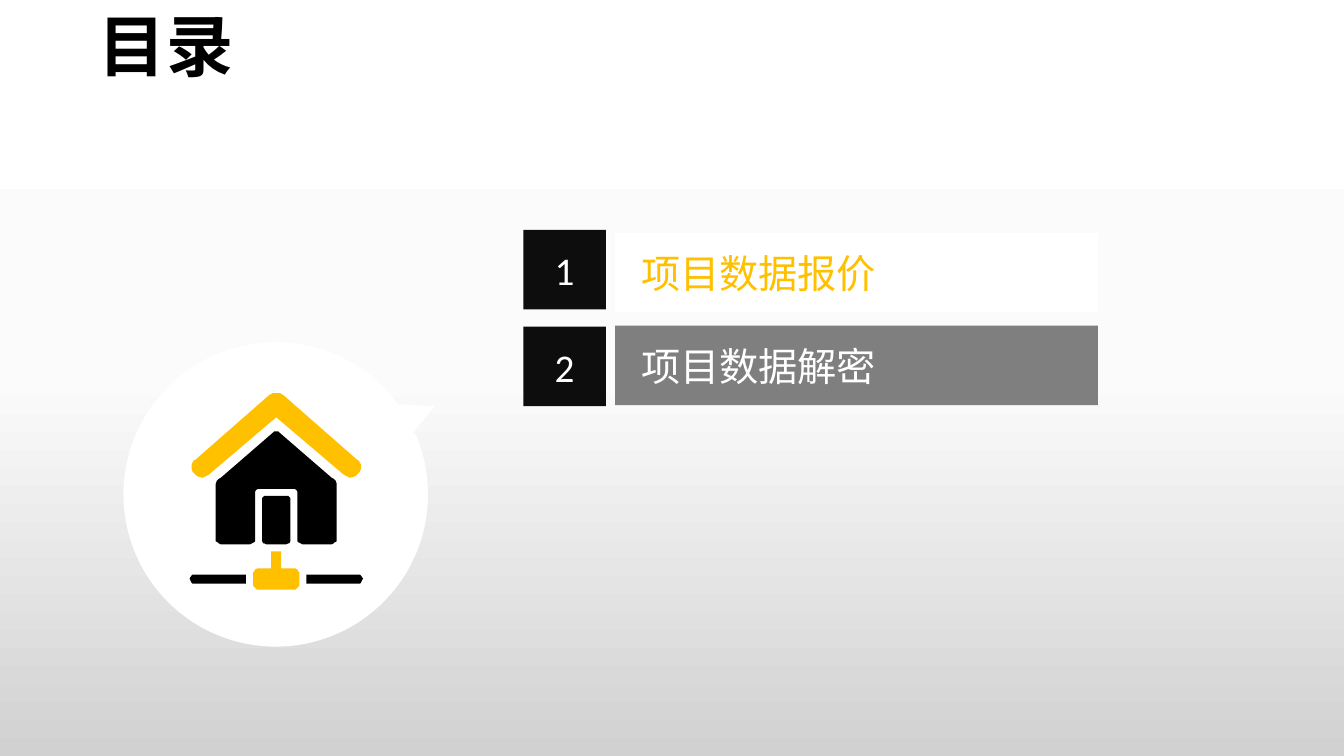
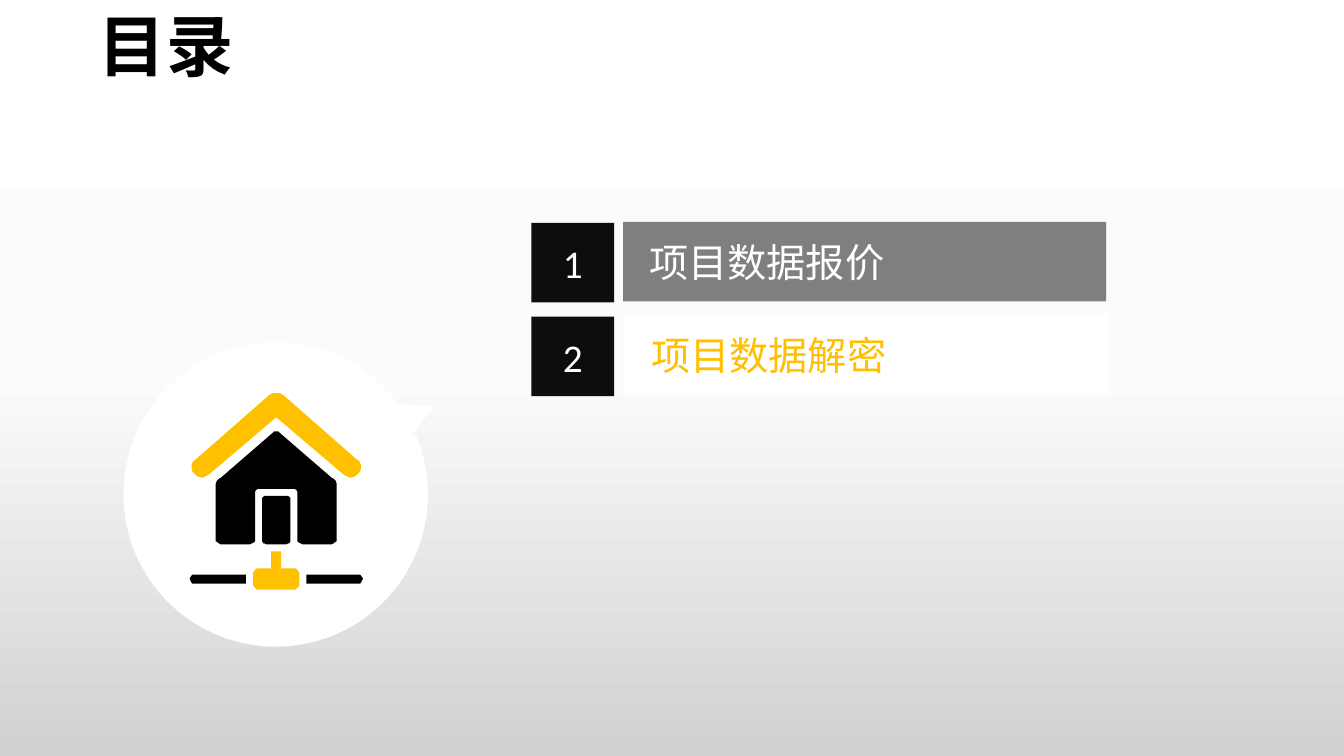
from copy import deepcopy
from dataclasses import dataclass
from math import cos, radians, sin

from pptx import Presentation
from pptx.dml.color import RGBColor
from pptx.enum.shapes import MSO_SHAPE
from pptx.enum.text import MSO_ANCHOR, MSO_AUTO_SIZE, PP_ALIGN
from pptx.oxml.ns import qn
from pptx.presentation import Presentation as Deck
from pptx.shapes.autoshape import Shape
from pptx.slide import Slide, SlideMaster
from pptx.text.text import TextFrame
from pptx.util import Emu, Inches, Pt

BLACK = RGBColor(0x00, 0x00, 0x00)
NEAR_BLACK = RGBColor(0x0D, 0x0D, 0x0D)
GRAY = RGBColor(0x7F, 0x7F, 0x7F)
WHITE = RGBColor(0xFF, 0xFF, 0xFF)
AMBER = RGBColor(0xFF, 0xC0, 0x00)
BACKDROP = (WHITE, RGBColor(0xFB, 0xFB, 0xFB), RGBColor(0xD1, 0xD1, 0xD1))

CJK_FONT = "Noto Sans CJK SC"
LATIN_FONT = "Calibri"

# The slide is a grid of square cells; all lengths are columns and rows of it.
CELL = Inches(1)
COLUMNS, ROWS = 13.33, 7.5

TOPICS = ("项目数据报价", "项目数据解密")
NUMBER_WIDTH, LABEL_WIDTH, BAR_HEIGHT = 0.82, 4.79, 0.79

Point = tuple[float, float]


@dataclass(frozen=True)
class Entry:
    """Where one agenda line has its number and its label."""
    number: Point
    label: Point


@dataclass(frozen=True)
class Agenda:
    entries: tuple[Entry, ...]
    current: int


@dataclass(frozen=True)
class IconPart:
    """Left half of an outline that is symmetric about ICON_AXIS."""
    left_half: tuple[Point, ...]
    color: RGBColor
    joined: bool = True


AGENDAS = (
    Agenda((Entry((5.19, 2.28), (6.1, 2.31)), Entry((5.19, 3.24), (6.1, 3.23))), current=0),
    Agenda((Entry((5.27, 2.21), (6.18, 2.2)), Entry((5.27, 3.14), (6.2, 3.12))), current=1),
)

ICON_AXIS = 2.74
DOOR = IconPart(((2.64, 4.92), (2.62, 4.92), (2.61, 4.93), (2.6, 4.94), (2.6, 5.37),
                 (2.61, 5.39), (2.62, 5.39), (2.64, 5.4)), BLACK)
WALLS = IconPart(((2.74, 4.28), (2.72, 4.28), (2.71, 4.29), (2.19, 4.74), (2.17, 4.75),
                  (2.15, 4.77), (2.14, 4.8), (2.14, 5.35), (2.14, 5.37), (2.16, 5.38),
                  (2.17, 5.39), (2.19, 5.4), (2.48, 5.4), (2.5, 5.39), (2.52, 5.38),
                  (2.53, 5.37), (2.53, 4.9), (2.53, 4.88), (2.54, 4.86), (2.56, 4.85),
                  (2.58, 4.85)), BLACK)
ROOF = IconPart(((2.74, 3.9), (2.7, 3.9), (2.69, 3.91), (2.67, 3.92), (1.94, 4.56),
                 (1.92, 4.57), (1.91, 4.59), (1.9, 4.61), (1.9, 4.65), (1.91, 4.68),
                 (1.93, 4.7), (1.95, 4.72), (1.97, 4.73), (2.01, 4.74), (2.03, 4.73),
                 (2.05, 4.72), (2.07, 4.71), (2.74, 4.14)), AMBER)
SOCKET = IconPart(((2.69, 5.47), (2.69, 5.64), (2.55, 5.64), (2.53, 5.65), (2.52, 5.67),
                   (2.51, 5.68), (2.51, 5.81), (2.52, 5.82), (2.53, 5.83), (2.55, 5.85)), AMBER)
CABLES = IconPart(((2.44, 5.7), (1.93, 5.7), (1.91, 5.7), (1.9, 5.71), (1.88, 5.74),
                   (1.89, 5.76), (1.9, 5.78), (1.91, 5.79), (2.44, 5.79)), BLACK, joined=False)
HOUSE_ICON = (DOOR, WALLS, ROOF, SOCKET, CABLES)

BUBBLE_CENTER, BUBBLE_RADIUS = (2.735, 4.905), 1.51
BUBBLE_TAIL = ((3.94, 4.01), (4.31, 4.03), (4.1, 4.29))


def cells(count: float) -> Emu:
    return Emu(round(CELL * count))


def paint(shape: Shape, color: RGBColor) -> None:
    shape.shadow.inherit = False
    shape.fill.solid()
    shape.fill.fore_color.rgb = color
    shape.line.fill.background()


def write(frame: TextFrame, text: str, size: int, color: RGBColor, font_name: str,
          align: PP_ALIGN, bold: bool = False) -> None:
    frame.text = text
    frame.word_wrap = True
    frame.auto_size = MSO_AUTO_SIZE.NONE
    frame.vertical_anchor = MSO_ANCHOR.MIDDLE
    paragraph = frame.paragraphs[0]
    paragraph.alignment = align
    font = paragraph.font
    font.size, font.bold = Pt(size), bold
    font.color.rgb = color
    font.name = font_name
    # East Asian glyphs take their typeface from a:ea, which has no public setter.
    properties = paragraph._p.pPr.find(qn("a:defRPr"))
    latin = properties.find(qn("a:latin"))
    east_asian = properties.makeelement(qn("a:ea"), {"typeface": font_name})
    latin.addnext(east_asian)


def set_backdrop(master: SlideMaster) -> None:
    fill = master.background.fill
    fill.gradient()
    fill.gradient_angle = 270
    stops = master.element.xpath("./p:cSld/p:bg//a:gsLst")[0]
    middle = deepcopy(stops[0])
    middle.set("pos", "50000")
    stops.insert(1, middle)
    for stop, color in zip(fill.gradient_stops, BACKDROP):
        stop.color.rgb = color


def add_outline(shapes, contours: list[list[Point]], color: RGBColor) -> None:
    """Fill closed contours, given in grid cells, as one freeform."""
    scaled = [[(cells(x), cells(y)) for x, y in contour] for contour in contours]
    builder = shapes.build_freeform(*scaled[0][0])
    for index, (start, *others) in enumerate(scaled):
        if index:
            builder.move_to(*start)
        builder.add_line_segments(others, close=True)
    paint(builder.convert_to_shape(), color)


def add_bubble(slide: Slide) -> None:
    center_x, center_y = BUBBLE_CENTER
    arc = [(center_x + BUBBLE_RADIUS * cos(radians(angle)),
            center_y + BUBBLE_RADIUS * sin(radians(angle))) for angle in range(-23, 321)]
    add_outline(slide.shapes, [[*arc, *BUBBLE_TAIL]], WHITE)


def add_house_icon(slide: Slide) -> None:
    icon = slide.shapes.add_group_shape()
    for part in HOUSE_ICON:
        left = list(part.left_half)
        right = [(2 * ICON_AXIS - x, y) for x, y in reversed(left)]
        contours = [left + right] if part.joined else [left, right]
        add_outline(icon.shapes, contours, part.color)


def add_title(slide: Slide) -> None:
    title = slide.shapes.title
    title.left, title.top = cells(0.98), cells(-0.01)
    title.width, title.height = cells(1.6), cells(0.91)
    title.text_frame.margin_left = title.text_frame.margin_right = 0
    write(title.text_frame, "目录", 48, BLACK, CJK_FONT, PP_ALIGN.LEFT, bold=True)


def add_bar(slide: Slide, corner: Point, width: float, color: RGBColor) -> TextFrame:
    left, top = corner
    bar = slide.shapes.add_shape(MSO_SHAPE.RECTANGLE, cells(left), cells(top),
                                 cells(width), cells(BAR_HEIGHT))
    paint(bar, color)
    return bar.text_frame


def add_agenda(slide: Slide, agenda: Agenda) -> None:
    for index, (entry, topic) in enumerate(zip(agenda.entries, TOPICS)):
        number = add_bar(slide, entry.number, NUMBER_WIDTH, NEAR_BLACK)
        write(number, str(index + 1), 28, WHITE, LATIN_FONT, PP_ALIGN.CENTER)
        bar_color, text_color = (WHITE, AMBER) if index == agenda.current else (GRAY, WHITE)
        label = add_bar(slide, entry.label, LABEL_WIDTH, bar_color)
        label.margin_left = cells(0.26)
        write(label, topic, 28, text_color, CJK_FONT, PP_ALIGN.LEFT)


def add_agenda_slide(deck: Deck, agenda: Agenda) -> None:
    slide = deck.slides.add_slide(deck.slide_layouts.get_by_name("Title Only"))
    add_bubble(slide)
    add_title(slide)
    add_house_icon(slide)
    add_agenda(slide, agenda)


def main() -> None:
    deck = Presentation()
    deck.slide_width, deck.slide_height = cells(COLUMNS), cells(ROWS)
    set_backdrop(deck.slide_master)
    for agenda in AGENDAS:
        add_agenda_slide(deck, agenda)
    deck.save("out.pptx")


if __name__ == "__main__":
    main()
